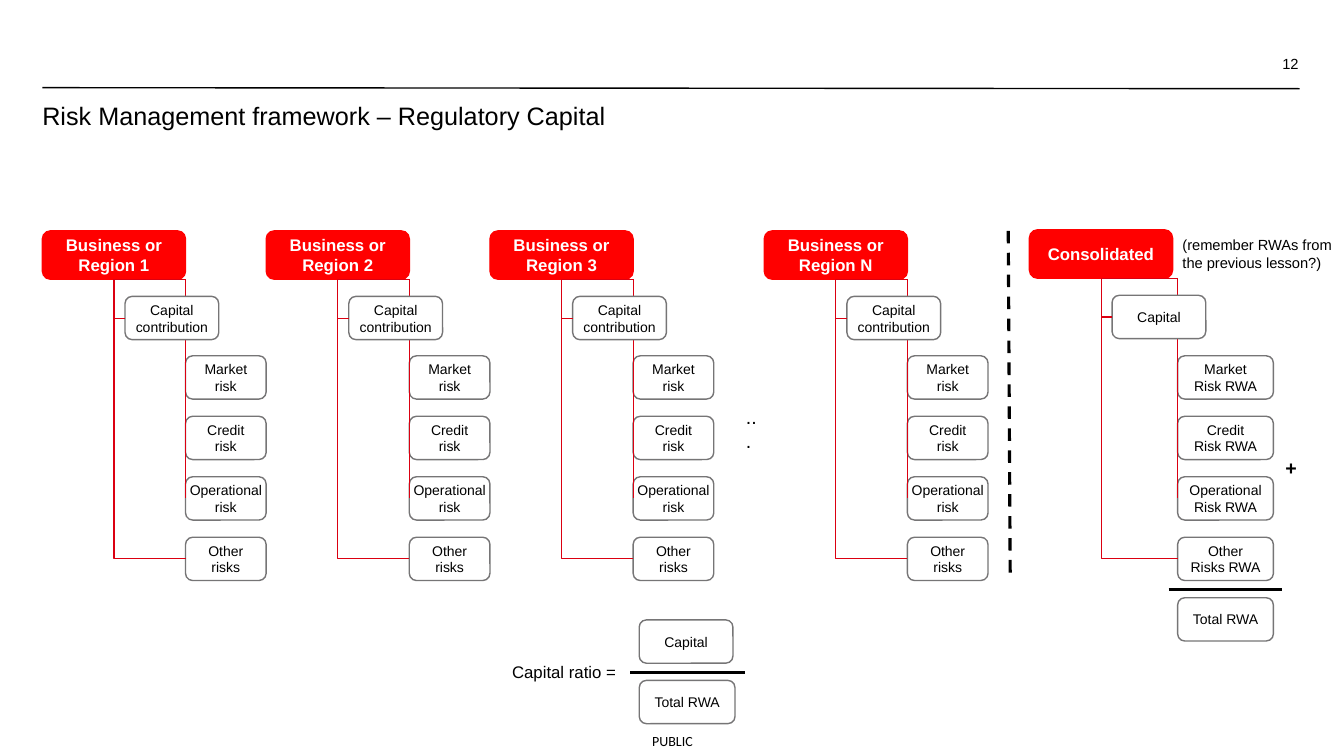
from dataclasses import dataclass

from pptx import Presentation
from pptx.dml.color import RGBColor
from pptx.enum.dml import MSO_LINE
from pptx.enum.shapes import MSO_CONNECTOR, MSO_SHAPE
from pptx.enum.text import MSO_ANCHOR, PP_ALIGN
from pptx.oxml.ns import qn
from pptx.util import Inches, Pt

STRAIGHT, ELBOW = MSO_CONNECTOR.STRAIGHT, MSO_CONNECTOR.ELBOW
ROUNDED = MSO_SHAPE.ROUNDED_RECTANGLE
LEFT, CENTER, RIGHT = PP_ALIGN.LEFT, PP_ALIGN.CENTER, PP_ALIGN.RIGHT
TOP, MIDDLE = MSO_ANCHOR.TOP, MSO_ANCHOR.MIDDLE
DASH = MSO_LINE.DASH

BLACK, WHITE, RED = "000000", "FFFFFF", "FF0000"
GREY, BRANCH_RED = "767576", "DB0011"

HEADER_WIDTH, HEADER_HEIGHT = 1.42, 0.48
BOX_HEIGHT, CAPITAL_WIDTH, TOTAL_WIDTH = 0.43, 0.93, 0.95
RISK_TOP, RISK_PITCH = 3.53, 0.6


@dataclass
class Tree:
    """One header with its capital box and a column of risk boxes."""
    title: str
    left: float
    top: float
    capital: str
    risks: tuple[str, ...]
    risk_offset: float
    risk_width: float


deck = Presentation()
deck.slide_width, deck.slide_height = Inches(13.33), Inches(7.5)
page = deck.slides.add_slide(deck.slide_layouts[6])


def color(value: str) -> RGBColor:
    return RGBColor.from_string(value)


def write(box, text: str, *, size: float = 10, font: str = "Arial",
          ink: str = BLACK, bold: bool = False, align=CENTER, anchor=MIDDLE,
          inset: tuple[float, float] = (0, 0.05), wrap: bool = True) -> None:
    frame = box.text_frame
    frame.word_wrap = wrap
    frame.vertical_anchor = anchor
    frame.margin_left = frame.margin_right = Inches(inset[0])
    frame.margin_top = frame.margin_bottom = Inches(inset[1])
    for index, line in enumerate(text.split("\n")):
        para = frame.add_paragraph() if index else frame.paragraphs[0]
        para.alignment = align
        span = para.add_run()
        span.text = line
        span.font.name = font
        span.font.size = Pt(size)
        span.font.bold = bold
        span.font.color.rgb = color(ink)


def add_label(text: str, left: float, top: float, width: float, height: float,
              **style) -> None:
    box = page.shapes.add_textbox(
        Inches(left), Inches(top), Inches(width), Inches(height))
    write(box, text, **style)


def add_box(text: str, left: float, top: float, width: float,
            height: float = BOX_HEIGHT, fill: str = WHITE, border: str = GREY,
            **style) -> None:
    box = page.shapes.add_shape(
        ROUNDED, Inches(left), Inches(top), Inches(width), Inches(height))
    box.shadow.inherit = False
    box.fill.solid()
    box.fill.fore_color.rgb = color(fill)
    box.line.color.rgb = color(border)
    box.line.width = Pt(1)
    write(box, text, **style)


def add_line(x1: float, y1: float, x2: float, y2: float, weight: float = 2.25,
             ink: str = BLACK, kind=STRAIGHT):
    line = page.shapes.add_connector(
        kind, Inches(x1), Inches(y1), Inches(x2), Inches(y2))
    line.line.color.rgb = color(ink)
    line.line.width = Pt(weight)
    properties = line._element.spPr
    properties.append(properties.makeelement(qn("a:effectLst"), {}))
    return line


def add_branch(x1: float, y1: float, x2: float, y2: float,
               down_first: bool = False) -> None:
    """Draw a one-corner branch; a half turn makes it run down, then across."""
    branch = add_line(x1, y1, x2, y2, 0.75, BRANCH_RED, ELBOW)
    properties = branch._element.spPr
    properties.find(qn("a:prstGeom")).set("prst", "bentConnector2")
    if down_first:
        properties.find(qn("a:xfrm")).set("rot", "10800000")


def add_tree(tree: Tree) -> None:
    stem = tree.left + HEADER_WIDTH / 2
    stem_top = tree.top + HEADER_HEIGHT
    risk_left = tree.left + tree.risk_offset
    capital_left, capital_top = tree.left + 0.82, tree.top + 0.65
    half = BOX_HEIGHT / 2
    tops = [RISK_TOP + RISK_PITCH * row for row in range(len(tree.risks))]

    add_box(tree.title, tree.left, tree.top, HEADER_WIDTH, HEADER_HEIGHT,
            RED, RED, size=12, ink=WHITE, bold=True)
    for text, top in zip(tree.risks, tops):
        add_box(text, risk_left, top, tree.risk_width)
    for top in tops[:-1]:
        add_branch(stem, stem_top, risk_left, top + half)
    add_box(tree.capital, capital_left, capital_top, CAPITAL_WIDTH)
    add_branch(stem, stem_top, capital_left, capital_top + half, True)
    add_branch(stem, stem_top, risk_left, tops[-1] + half, True)


def main() -> None:
    # Page furniture and title
    add_line(0.42, 0.87, 12.89, 0.88, 1)
    add_label("PUBLIC", 6.32, 7.27, 0.7, 0.17, font="Calibri", inset=(0, 0))
    add_label("Risk Management framework – Regulatory Capital",
              0.42, 0.99, 12.47, 0.35, size=18, align=LEFT, anchor=TOP,
              inset=(0, 0))
    add_label("12", 9.91, 0.54, 2.97, 0.33, size=10.5, align=RIGHT,
              anchor=TOP, inset=(0, 0))

    # Regional trees
    region_risks = ("Market\nrisk", "Credit\nrisk", "Operational risk",
                    "Other\nrisks")
    region_lefts = {"1": 0.42, "2": 2.64, "3": 4.86, "N": 7.58}
    for name, left in region_lefts.items():
        add_tree(Tree(f"Business or Region {name}", left, 2.29,
                      "Capital contribution", region_risks, HEADER_WIDTH, 0.8))

    # Consolidated tree
    total_risks = ("Market\nRisk RWA", "Credit\nRisk RWA",
                   "Operational Risk RWA", "Other\nRisks RWA")
    add_tree(Tree("Consolidated", 10.21, 2.28, "Capital", total_risks,
                  1.47, TOTAL_WIDTH))
    add_line(11.59, 5.85, 12.72, 5.85)
    add_box("Total RWA", 11.68, 5.93, TOTAL_WIDTH)
    divider = add_line(10, 2.29, 10.02, 5.76)
    divider.line.dash_style = DASH

    # Free labels
    label = {"align": LEFT, "anchor": TOP, "inset": (0.1, 0.05)}
    add_label("...", 7.3, 3.97, 0.35, 0.33, size=14, **label)
    add_label("+", 12.65, 4.47, 0.31, 0.33, size=14, bold=True, wrap=False,
              **label)
    add_label("(remember RWAs from the previous lesson?)",
              11.63, 2.29, 1.7, 0.62, size=10.5, **label)

    # Capital ratio
    add_box("Capital", 6.34, 6.15, CAPITAL_WIDTH)
    add_line(6.25, 6.67, 7.39, 6.67)
    add_box("Total RWA", 6.34, 6.75, TOTAL_WIDTH)
    add_label("Capital ratio =", 4.98, 6.52, 1.28, 0.3, size=12, wrap=False,
              **label)

    deck.save("out.pptx")


if __name__ == "__main__":
    main()
